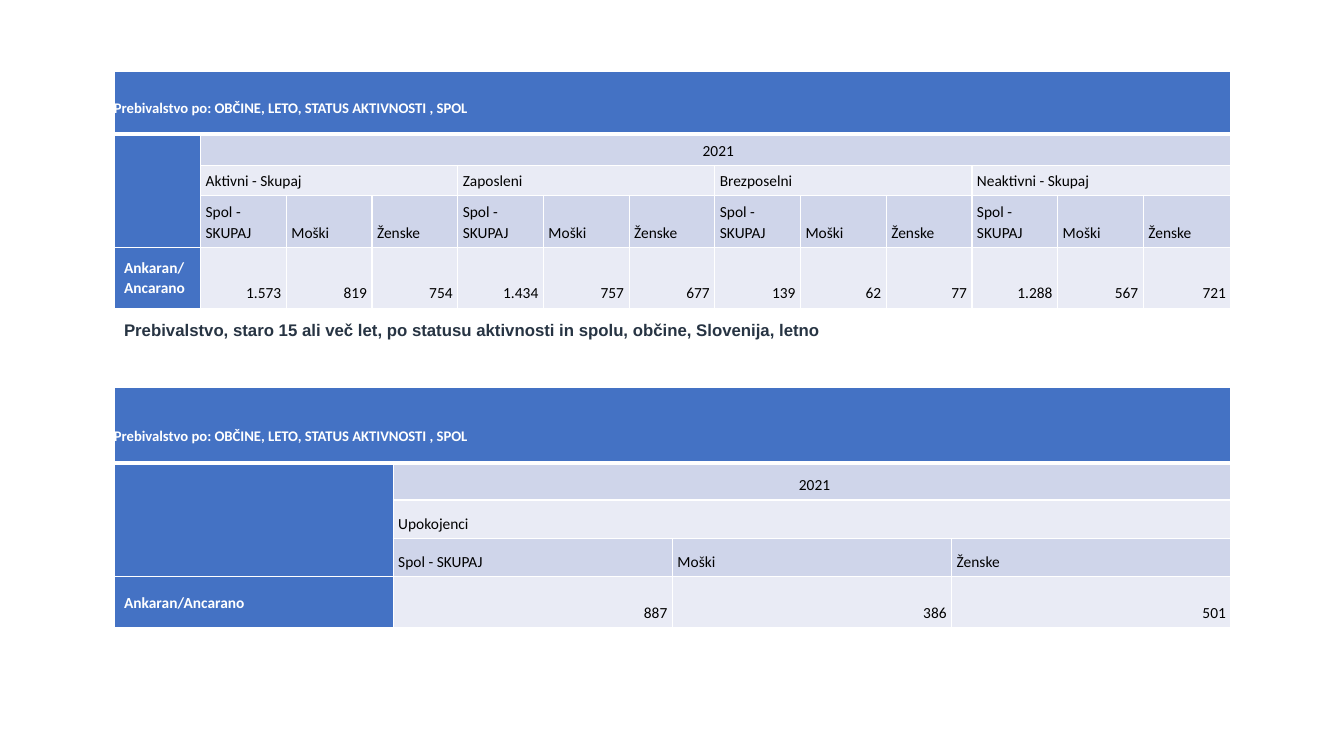
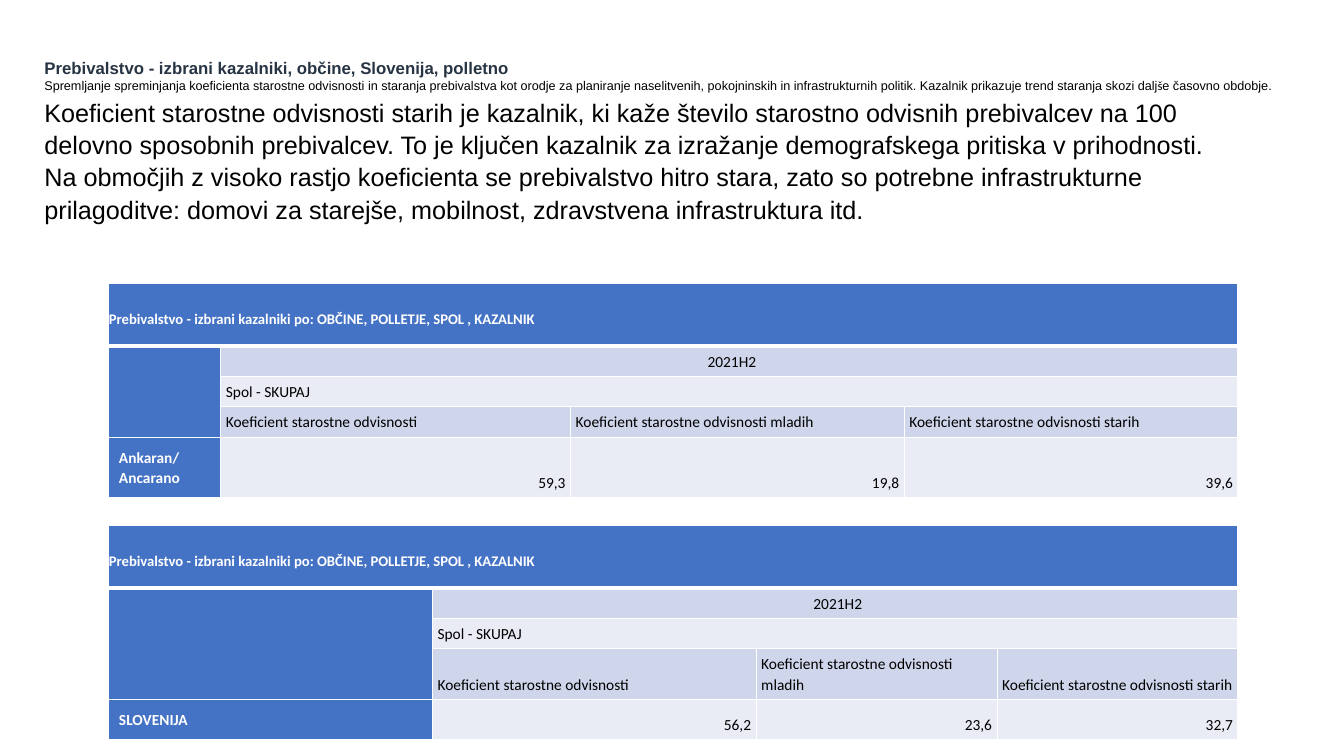
import pptx
import pptx.util
import pptx.dml.color
import pptx.enum.text
import pptx.oxml

Pt = pptx.util.Pt
RGB = pptx.dml.color.RGBColor
Align = pptx.enum.text.PP_ALIGN
Anchor = pptx.enum.text.MSO_ANCHOR
Fit = pptx.enum.text.MSO_AUTO_SIZE

SCALE = 9144  # 100 px to the inch
BLUE = RGB(0x44, 0x72, 0xC4)
DARK = RGB(0xCF, 0xD5, 0xEA)
PALE = RGB(0xE9, 0xEB, 0xF5)
WHITE = RGB(0xFF, 0xFF, 0xFF)
BLACK = RGB(0, 0, 0)
NAVY = RGB(0x27, 0x34, 0x43)
GENDERS = ["Spol - SKUPAJ", "Moški", "Ženske"]
RATIOS = ["Koeficient starostne odvisnosti" + end
          for end in ("", " mladih", " starih")]
STATUS = "Prebivalstvo po: OBČINE, LETO, STATUS AKTIVNOSTI , SPOL"
INDEX = "Prebivalstvo - izbrani kazalniki po: OBČINE, POLLETJE, SPOL , KAZALNIK"


def px(value):
    return pptx.util.Emu(value * SCALE)


def add_run(para, text, size, color, font="Arial", bold=False):
    run = para.add_run()
    run.text = text
    run.font.size = Pt(size)
    run.font.name = font
    run.font.bold = bold
    run.font.color.rgb = color


def set_text(holder, box, runs, size, color=BLACK, bold=False, lead=1, after=0):
    """Move a placeholder and write one plain paragraph of (text, font) runs."""
    holder.left, holder.top, holder.width, holder.height = map(px, box)
    frame = holder.text_frame
    frame.word_wrap = True
    frame.auto_size = Fit.NONE
    frame.vertical_anchor = Anchor.TOP
    para = frame.paragraphs[0]
    para.alignment = Align.LEFT
    para.line_spacing = lead
    para.space_before = Pt(0)
    para.space_after = Pt(after)
    props = para._p.get_or_add_pPr()
    props.set("marL", "0")
    props.set("indent", "0")
    pptx.oxml.ns  # namespace helpers used below
    props.append(props.makeelement(pptx.oxml.ns.qn("a:buNone"), {}))
    for text, font in runs:
        add_run(para, text, size, color, font, bold)


def set_title(slide, left, top, text):
    set_text(slide.shapes.title, (left, top, 1100, 30), [(text, "Arial")],
             12, NAVY, True)


def set_edges(cell, row):
    """Draw white borders, thick between the banner and the rows below."""
    props = cell._tc.get_or_add_tcPr()
    thick = {("B", 0), ("T", 1)}
    for place, side in enumerate("LRTB"):
        width = Pt(3 if (side, row) in thick else 1)
        props.insert(place, pptx.oxml.parse_xml(
            f'<a:ln{side} {pptx.oxml.ns.nsdecls("a")} w="{width}"><a:solidFill>'
            f'<a:srgbClr val="{WHITE}"/></a:solidFill></a:ln{side}>'))


def set_cell(cell, text, color=BLACK, size=11, bold=False, align=Align.LEFT,
             anchor=Anchor.BOTTOM, inset=(5, 5, 5, 5), lead=1.07):
    (cell.margin_left, cell.margin_top,
     cell.margin_right, cell.margin_bottom) = map(px, inset)
    cell.vertical_anchor = anchor
    para = cell.text_frame.paragraphs[0]
    para.alignment = align
    para.line_spacing = lead
    para.space_after = Pt(8)
    add_run(para, text, size, color, "Calibri", bold)


def add_grid(slide, left, top, cols, rows, head, year, groups, subs, place, values):
    """Add a table: banner, year, groups, sub-heads and one row of values."""
    grid = slide.shapes.add_table(len(rows), len(cols), px(left), px(top),
                                  px(sum(cols)), px(sum(rows))).table
    grid.first_row = grid.horz_banding = False
    for col, width in zip(grid.columns, cols):
        col.width = px(width)
    for row, height in zip(grid.rows, rows):
        row.height = px(height)
    fills = [BLUE, DARK, PALE, DARK, PALE]
    for r, fill in enumerate(fills):
        for c in range(len(cols)):
            cell = grid.cell(r, c)
            cell.fill.solid()
            cell.fill.fore_color.rgb = fill if c else BLUE
            set_edges(cell, r)
            end = cell.text_frame.paragraphs[0]._p.get_or_add_endParaRPr()
            end.set("sz", "1100")

    last = len(cols) - 1
    step = last // len(groups)
    grid.cell(0, 0).merge(grid.cell(0, last))
    grid.cell(1, 0).merge(grid.cell(3, 0))
    grid.cell(1, 1).merge(grid.cell(1, last))
    set_cell(grid.cell(0, 0), head, WHITE, 10.5, True,
             inset=(0, 16, 5, 17), lead=Pt(21))
    set_cell(grid.cell(1, 1), year, align=Align.CENTER, inset=(10, 5, 5, 5))
    for i, group in enumerate(groups):
        first = 1 + i * step
        grid.cell(2, first).merge(grid.cell(2, first + step - 1))
        set_cell(grid.cell(2, first), group)
    for c, (sub, value) in enumerate(zip(subs * len(groups), values), 1):
        set_cell(grid.cell(3, c), sub)
        set_cell(grid.cell(4, c), value, align=Align.RIGHT)
    set_cell(grid.cell(4, 0), place, WHITE, bold=True, anchor=Anchor.MIDDLE,
             inset=(10, 10, 10, 10))


def add_work(deck):
    slide = deck.slides.add_slide(deck.slide_layouts[5])
    set_title(slide, 113, 312, "Prebivalstvo, staro 15 ali več let, po statusu "
              "aktivnosti in spolu, občine, Slovenija, letno")
    add_grid(slide, 113, 384, [277] * 4, [75, 37, 38, 38, 51], STATUS, "2021",
             ["Upokojenci"], GENDERS, "Ankaran/Ancarano", ["887", "386", "501"])
    add_grid(slide, 113, 71, [86] + [85] * 11 + [87], [61, 31, 30, 51, 60],
             STATUS, "2021",
             ["Aktivni - Skupaj", "Zaposleni", "Brezposelni", "Neaktivni - Skupaj"],
             GENDERS, "Ankaran/Ancarano",
             ["1.573", "819", "754", "1.434", "757", "677",
              "139", "62", "77", "1.288", "567", "721"])


def add_age(deck):
    slide = deck.slides.add_slide(deck.slide_layouts[3])
    set_title(slide, 34, 52,
              "Prebivalstvo - izbrani kazalniki, občine, Slovenija, polletno")
    set_text(slide.placeholders[1], (34, 72, 1290, 25), [
        ("Spremljanje spreminjanja koeficienta starostne odvisnosti in staranja "
         "prebivalstva kot orodje za planiranje naselitvenih, pokojninskih in "
         "infrastrukturnih politik. Kazalnik prikazuje trend staranja skozi dalj",
         "Arial"), ("š", "Calibri"), ("e časovno obdobje.", "Arial")], 9)
    set_text(slide.placeholders[2], (34, 89, 1185, 138), [
        ("Koeficient starostne odvisnosti starih je kazalnik, ki kaže število "
         "starostno odvisnih prebivalcev na 100 delovno sposobnih prebivalcev. "
         "To je ključen kazalnik za izražanje demografskega pritiska v prihodnosti. "
         "Na območjih z visoko rastjo koeficienta se prebivalstvo hitro stara, "
         "zato so potrebne infrastrukturne prilagoditve: domovi za starejše, "
         "mobilnost, zdravstvena infrastruktura itd.", "Arial")],
        18, lead=1.07, after=8)
    add_grid(slide, 108, 521, [321, 321, 239, 239], [61, 30, 30, 50, 40], INDEX,
             "2021H2", GENDERS[:1], RATIOS, "SLOVENIJA", ["56,2", "23,6", "32,7"])
    add_grid(slide, 108, 281, [111, 347, 331, 331], [61, 30, 30, 30, 60], INDEX,
             "2021H2", GENDERS[:1], RATIOS, "Ankaran/Ancarano",
             ["59,3", "19,8", "39,6"])


def main():
    deck = pptx.Presentation()
    deck.slide_width, deck.slide_height = px(1333), px(750)
    add_work(deck)
    add_age(deck)
    deck.save("out.pptx")


if __name__ == "__main__":
    main()
